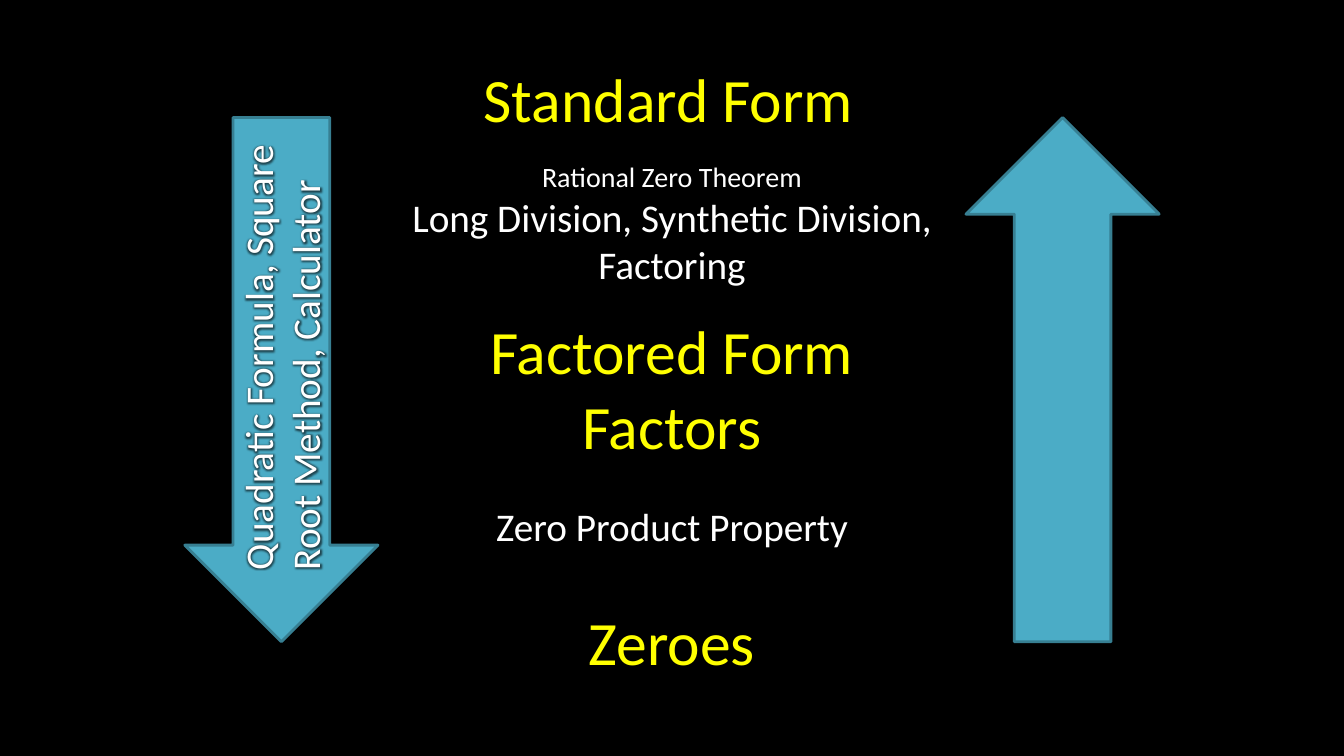
from dataclasses import dataclass

from lxml.etree import SubElement
from pptx import Presentation
from pptx.dml.color import RGBColor
from pptx.enum.shapes import MSO_SHAPE
from pptx.enum.text import MSO_ANCHOR, PP_ALIGN
from pptx.oxml.ns import qn
from pptx.slide import Slide
from pptx.util import Inches, Pt

COLORS = {
    "background": "000000",
    "form": "FFFF00",
    "method": "FFFFFF",
    "arrow": "4BACC6",
    "arrow_edge": "377F92",
    "glow": "000000",
}
COLUMNS, ROWS = 160, 90
CELL = Inches(7.5) / ROWS


@dataclass(frozen=True)
class Box:
    column: float
    row: float
    columns: float
    rows: float

    def emu(self) -> list[int]:
        return [round(n * CELL) for n in (self.column, self.row, self.columns, self.rows)]


@dataclass(frozen=True)
class Label:
    text: str
    box: Box
    color: str
    sizes: tuple[int, ...]
    align: PP_ALIGN = PP_ALIGN.CENTER
    anchor: MSO_ANCHOR = MSO_ANCHOR.MIDDLE
    rotation: int = 0
    glow: bool = False


@dataclass(frozen=True)
class Arrow:
    box: Box
    rotation: int


def form(text: str, row: float, column: float = 29) -> Label:
    return Label(text, Box(column, row, 102, 19.3), "form", (44,))


def method(text: str, row: float, *sizes: int) -> Label:
    return Label(text, Box(39.5, row, 81, 19.3), "method", sizes)


ARROWS = [Arrow(Box(22, 14, 23, 62.4), 0), Arrow(Box(115, 14, 23, 62.4), 180)]
LABELS = [
    form("Standard Form", 2, 28.6),
    form("Factored Form", 32),
    form("Factors", 40.9),
    form("Zeroes", 66.7),
    method("Rational Zero Theorem\vLong Division, Synthetic Division, Factoring", 17, 20, 28),
    method("Zero Product Property", 53, 28),
    Label("Quadratic Formula, Square Root Method, Calculator",
          Box(6, 35.3, 55, 12.5), "method", (28,),
          PP_ALIGN.LEFT, MSO_ANCHOR.TOP, 270, True),
]


def rgb(name: str) -> RGBColor:
    return RGBColor.from_string(COLORS[name])


def add_glow(r) -> None:
    effects = SubElement(r.font._element, qn("a:effectLst"))
    r.font._element.find(qn("a:solidFill")).addnext(effects)
    glow = SubElement(effects, qn("a:glow"), rad=str(Pt(5)))
    color = SubElement(glow, qn("a:srgbClr"), val=COLORS["glow"])
    SubElement(color, qn("a:alpha"), val="60000")


def draw_arrow(s: Slide, arrow: Arrow) -> None:
    sp = s.shapes.add_shape(MSO_SHAPE.DOWN_ARROW, *arrow.box.emu())
    sp.rotation = arrow.rotation
    sp.shadow.inherit = False
    sp.fill.solid()
    sp.fill.fore_color.rgb = rgb("arrow")
    sp.line.color.rgb = rgb("arrow_edge")
    sp.line.width = Pt(2)


def draw_label(s: Slide, label: Label) -> None:
    sp = s.shapes.add_textbox(*label.box.emu())
    sp.rotation = label.rotation
    tf = sp.text_frame
    tf.word_wrap = True
    tf.vertical_anchor = label.anchor
    p = tf.paragraphs[0]
    p.text = label.text
    p.alignment = label.align
    for r, size in zip(p.runs, label.sizes):
        r.font.name = "Calibri"
        r.font.size = Pt(size)
        r.font.color.rgb = rgb(label.color)
        if label.glow:
            add_glow(r)


def main() -> None:
    prs = Presentation()
    prs.slide_width = round(COLUMNS * CELL)
    prs.slide_height = round(ROWS * CELL)
    s = prs.slides.add_slide(prs.slide_layouts[6])
    s.background.fill.solid()
    s.background.fill.fore_color.rgb = rgb("background")
    for arrow in ARROWS:
        draw_arrow(s, arrow)
    for label in LABELS:
        draw_label(s, label)
    prs.save("out.pptx")


if __name__ == "__main__":
    main()
